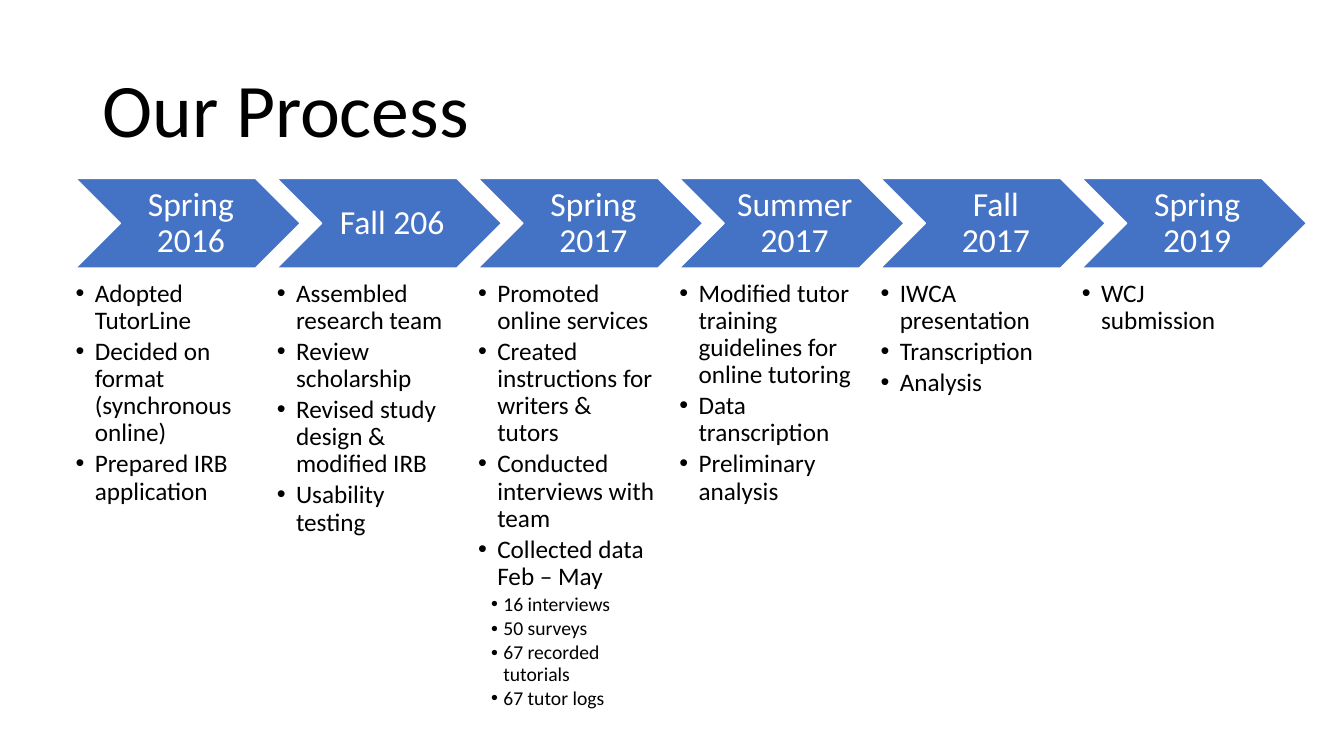
from dataclasses import dataclass

from lxml import etree
from pptx import Presentation
from pptx import util as u
from pptx.dml.color import RGBColor
from pptx.enum import shapes, text
from pptx.oxml import ns

TITLE = "Our Process"
STAGES = [
    ("Spring 2016", [
        (1, "Adopted TutorLine"),
        (1, "Decided on format (synchronous online)"),
        (1, "Prepared IRB application"),
    ]),
    ("Fall 206", [
        (1, "Assembled research team"),
        (1, "Review scholarship"),
        (1, "Revised study design & modified IRB"),
        (1, "Usability testing"),
    ]),
    ("Spring 2017", [
        (1, "Promoted online services"),
        (1, "Created instructions for writers & tutors"),
        (1, "Conducted interviews with team"),
        (1, "Collected data Feb – May"),
        (2, "16 interviews"),
        (2, "50 surveys"),
        (2, "67 recorded tutorials"),
        (2, "67 tutor logs"),
    ]),
    ("Summer 2017", [
        (1, "Modified tutor training guidelines for online tutoring"),
        (1, "Data transcription"),
        (1, "Preliminary analysis"),
    ]),
    ("Fall 2017", [
        (1, "IWCA presentation"),
        (1, "Transcription"),
        (1, "Analysis"),
    ]),
    ("Spring 2019", [
        (1, "WCJ submission"),
    ]),
]
BULLET_INDENTS = {1: (0.19, -0.19), 2: (0.25, -0.12)}


@dataclass(frozen=True)
class Theme:
    font: str = "Calibri"
    ink: RGBColor = RGBColor(0x00, 0x00, 0x00)
    paper: RGBColor = RGBColor(0xFF, 0xFF, 0xFF)
    accent: RGBColor = RGBColor(0x44, 0x72, 0xC4)
    title_size: int = 54
    stage_size: int = 24
    bullet_sizes: tuple = (18, 14)


THEME = Theme()
LEFT, PITCH = 0.75, 1.996
CHEVRON_TOP, CHEVRON_WIDTH, CHEVRON_HEIGHT = 1.77, 2.23, 0.89
LIST_TOP, LIST_WIDTH, LIST_HEIGHT = 2.78, 1.79, 4.41


def format_paragraph(para, size, color, align):
    para.alignment = align
    para.line_spacing = 0.9
    for span in para.runs:
        span.font.name = THEME.font
        span.font.size = u.Pt(size)
        span.font.color.rgb = color


def set_margins(frame, left, top, right, bottom):
    frame.margin_left, frame.margin_top = u.Inches(left), u.Inches(top)
    frame.margin_right, frame.margin_bottom = u.Inches(right), u.Inches(bottom)
    frame.word_wrap = True


def add_bullet(para, level):
    margin, indent = BULLET_INDENTS[level]
    properties = para._p.get_or_add_pPr()
    properties.set("marL", str(u.Inches(margin)))
    properties.set("indent", str(u.Inches(indent)))
    etree.SubElement(properties, ns.qn("a:buFont")).set("typeface", "Arial")
    etree.SubElement(properties, ns.qn("a:buChar")).set("char", "•")


def add_title(page):
    title = page.shapes.title
    title.left, title.top = u.Inches(0.92), u.Inches(0.4)
    title.width, title.height = u.Inches(11.5), u.Inches(1.45)
    frame = title.text_frame
    frame.text = TITLE
    frame.vertical_anchor = text.MSO_ANCHOR.MIDDLE
    format_paragraph(frame.paragraphs[0], THEME.title_size, THEME.ink, text.PP_ALIGN.LEFT)


def add_chevron(page, left, label):
    chevron = page.shapes.add_shape(
        shapes.MSO_SHAPE.CHEVRON, u.Inches(left), u.Inches(CHEVRON_TOP),
        u.Inches(CHEVRON_WIDTH), u.Inches(CHEVRON_HEIGHT))
    chevron.shadow.inherit = False
    chevron.fill.solid()
    chevron.fill.fore_color.rgb = THEME.accent
    chevron.line.color.rgb = THEME.paper
    chevron.line.width = u.Pt(1)
    frame = chevron.text_frame
    frame.text = label
    frame.vertical_anchor = text.MSO_ANCHOR.MIDDLE
    set_margins(frame, 0.1, 0.04, 0.04, 0.04)
    format_paragraph(frame.paragraphs[0], THEME.stage_size, THEME.paper, text.PP_ALIGN.CENTER)


def add_list(page, left, items):
    box = page.shapes.add_textbox(
        u.Inches(left), u.Inches(LIST_TOP), u.Inches(LIST_WIDTH), u.Inches(LIST_HEIGHT))
    frame = box.text_frame
    set_margins(frame, 0, 0, 0, 0)
    frame.text = "\n".join(label for level, label in items)
    for para, (level, label) in zip(frame.paragraphs, items):
        size = THEME.bullet_sizes[level - 1]
        para.level = level
        format_paragraph(para, size, THEME.ink, text.PP_ALIGN.LEFT)
        para.space_before = u.Pt(0)
        para.space_after = u.Pt(size * 0.15)
        add_bullet(para, level)


def main():
    deck = Presentation()
    deck.slide_width, deck.slide_height = u.Inches(13.33), u.Inches(7.5)
    page = deck.slides.add_slide(deck.slide_layouts.get_by_name("Title Only"))
    add_title(page)
    for index, (label, items) in enumerate(STAGES):
        left = LEFT + index * PITCH
        add_chevron(page, left, label)
        add_list(page, left, items)
    deck.save("out.pptx")


if __name__ == "__main__":
    main()
